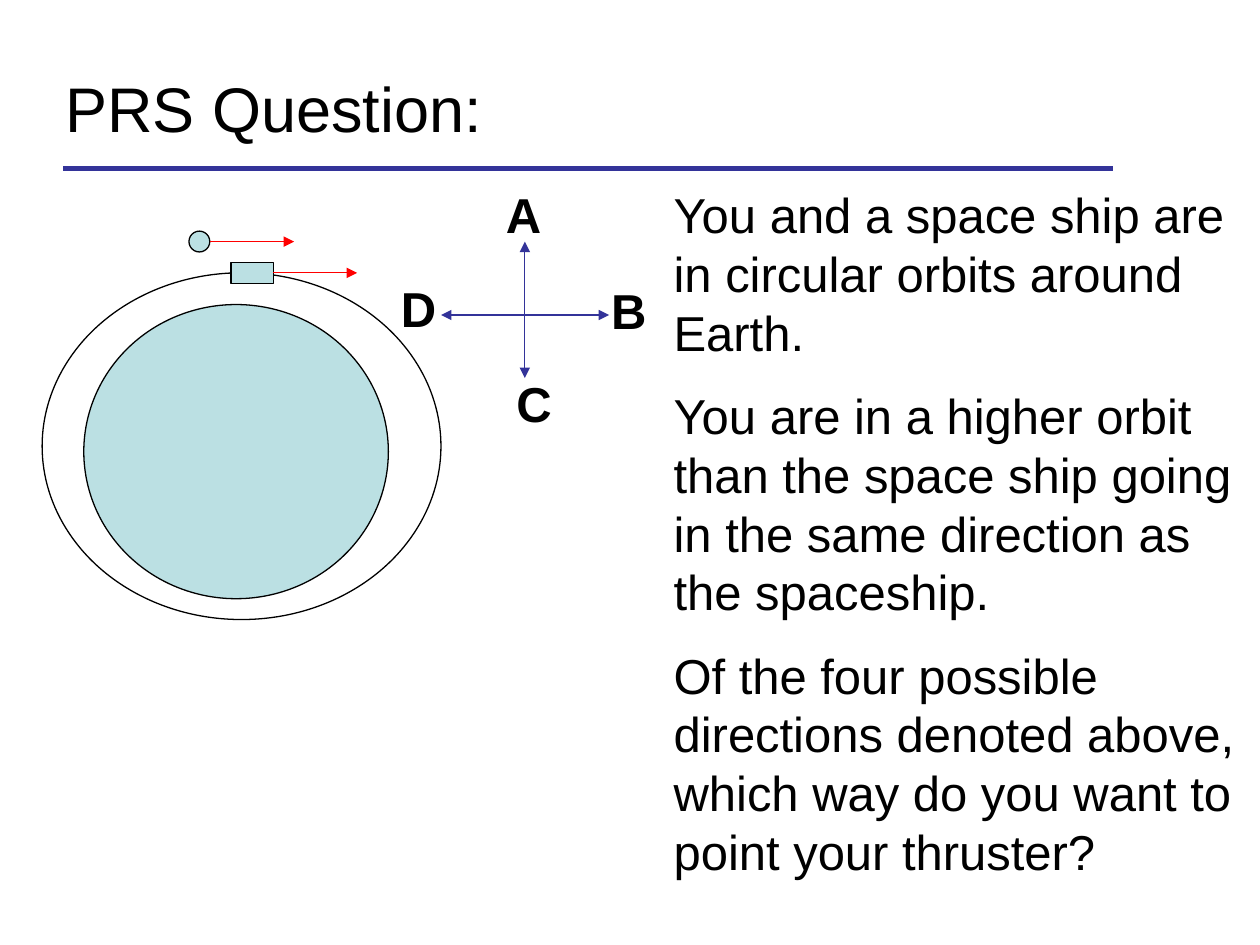
from dataclasses import dataclass
from typing import NamedTuple, Optional

from lxml import etree
from pptx import Presentation
from pptx.dml.color import RGBColor
from pptx.enum import shapes, text
from pptx.oxml.ns import qn
from pptx.util import Cm, Pt


@dataclass(frozen=True)
class Theme:
    ink: str = "000000"
    accent: str = "333399"
    velocity: str = "FF0000"
    body_fill: str = "BBE0E3"
    font: str = "Arial"
    title_size: float = 36
    text_size: float = 28
    thin: float = 0.75
    thick: float = 3


class Box(NamedTuple):
    left: float
    top: float
    width: float
    height: float


class Body(NamedTuple):
    kind: shapes.MSO_SHAPE
    box: Box
    fill: Optional[str]


class Arrow(NamedTuple):
    start: tuple[float, float]
    end: tuple[float, float]
    color: str


class Label(NamedTuple):
    letter: str
    left: float
    top: float


THEME = Theme()
OVAL, RECTANGLE = shapes.MSO_SHAPE.OVAL, shapes.MSO_SHAPE.RECTANGLE

EARTH = Body(OVAL, Box(1.69, 6.14, 6.14, 5.93), THEME.body_fill)
YOU = Body(OVAL, Box(3.81, 4.66, 0.42, 0.42), THEME.body_fill)
ORBIT = Body(OVAL, Box(0.85, 5.5, 8.04, 6.99), None)
SHIP = Body(RECTANGLE, Box(4.66, 5.29, 0.85, 0.42), THEME.body_fill)

SHIP_VELOCITY = Arrow((5.51, 5.5), (7.2, 5.5), THEME.velocity)
YOUR_VELOCITY = Arrow((4.23, 4.87), (5.93, 4.87), THEME.velocity)

HUB_X, HUB_Y = 10.58, 6.35
COMPASS = [
    Arrow((9.74, HUB_Y), (12.28, HUB_Y), THEME.accent),
    Arrow((HUB_X, 5.72), (HUB_X, 7.62), THEME.accent),
    Arrow((HUB_X, HUB_Y), (8.89, HUB_Y), THEME.accent),
    Arrow((HUB_X, HUB_Y), (HUB_X, 4.87), THEME.accent),
]
DIRECTIONS = [
    Label("A", 9.95, 3.6),
    Label("B", 12.07, 5.54),
    Label("C", 10.16, 7.41),
    Label("D", 7.83, 5.5),
]
QUESTION = [
    "You and a space ship are in circular orbits around Earth.",
    "You are in a higher orbit than the space ship going in the same "
    "direction as the spaceship.",
    "Of the four possible directions denoted above, which way do you want "
    "to point your thruster?",
]


def add_text(slide, paragraphs: list[str], box: Box, *,
             size: float = THEME.text_size, bold: bool = False,
             color: str = THEME.ink) -> None:
    frame = slide.shapes.add_textbox(*map(Cm, box)).text_frame
    frame.word_wrap = True
    frame.auto_size = text.MSO_AUTO_SIZE.SHAPE_TO_FIT_TEXT
    for index, words in enumerate(paragraphs):
        paragraph = frame.add_paragraph() if index else frame.paragraphs[0]
        paragraph.line_spacing = Pt(1.2 * size)
        if index:
            paragraph.space_before = Pt(size / 2)
        run = paragraph.add_run()
        run.text = words
        run.font.name = THEME.font
        run.font.size = Pt(size)
        run.font.bold = bold
        run.font.color.rgb = RGBColor.from_string(color)


def add_body(slide, body: Body):
    shape = slide.shapes.add_shape(body.kind, *map(Cm, body.box))
    shape.shadow.inherit = False
    if body.fill:
        shape.fill.solid()
        shape.fill.fore_color.rgb = RGBColor.from_string(body.fill)
    else:
        shape.fill.background()
    shape.line.color.rgb = RGBColor.from_string(THEME.ink)
    shape.line.width = Pt(THEME.thin)
    return shape


def add_line(slide, line: Arrow, *, width: float = THEME.thin,
             arrowhead: bool = True):
    connector = slide.shapes.add_connector(
        shapes.MSO_CONNECTOR.STRAIGHT, *map(Cm, line.start + line.end))
    connector.line.color.rgb = RGBColor.from_string(line.color)
    connector.line.width = Pt(width)
    if arrowhead:
        outline = connector.line._get_or_add_ln()
        etree.SubElement(outline, qn("a:tailEnd"), type="triangle")
    etree.SubElement(connector._element.spPr, qn("a:effectLst"))
    return connector


def main() -> None:
    deck = Presentation()
    deck.slide_width, deck.slide_height = Cm(25.4), Cm(19.05)
    slide = deck.slides.add_slide(deck.slide_layouts[6])

    add_text(slide, ["PRS Question:"], Box(1.07, 1.27, 11.22, 1.78),
             size=THEME.title_size)
    add_line(slide, Arrow((1.27, 3.39), (22.43, 3.39), THEME.accent),
             width=THEME.thick, arrowhead=False)

    for body in (EARTH, YOU, ORBIT):
        add_body(slide, body)
    ship = add_body(slide, SHIP)
    add_line(slide, SHIP_VELOCITY).begin_connect(ship, 3)
    for arrow in (YOUR_VELOCITY, *COMPASS):
        add_line(slide, arrow)

    for label in DIRECTIONS:
        add_text(slide, [label.letter],
                 Box(label.left, label.top, 2.54, 1.45), bold=True)
    add_text(slide, QUESTION, Box(13.33, 3.6, 12.28, 14.5))

    deck.save("out.pptx")


if __name__ == "__main__":
    main()
